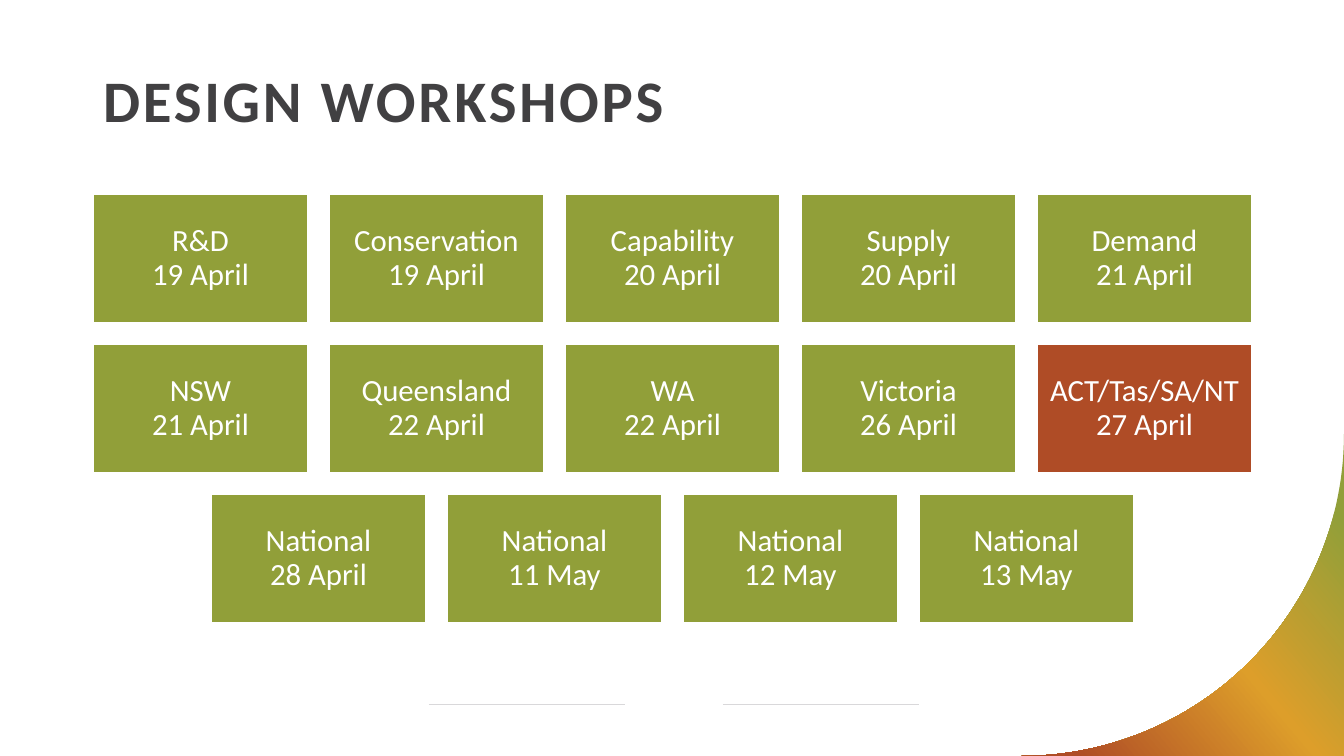
from copy import deepcopy
from dataclasses import dataclass
from math import cos, pi, sin

from lxml import etree
from pptx import Presentation
from pptx.dml.color import RGBColor
from pptx.enum.shapes import MSO_CONNECTOR, MSO_SHAPE
from pptx.enum.text import MSO_ANCHOR, MSO_AUTO_SIZE, PP_ALIGN
from pptx.oxml.ns import qn
from pptx.slide import Slide
from pptx.util import Emu, Pt

RECTANGLE = MSO_SHAPE.RECTANGLE
STRAIGHT = MSO_CONNECTOR.STRAIGHT
TOP, MIDDLE = MSO_ANCHOR.TOP, MSO_ANCHOR.MIDDLE
LEFT, CENTER = PP_ALIGN.LEFT, PP_ALIGN.CENTER
NO_AUTOFIT = MSO_AUTO_SIZE.NONE

GREEN = RGBColor(0x91, 0x9F, 0x39)
AMBER = RGBColor(0xDD, 0x9E, 0x2A)
RUST = RGBColor(0xAF, 0x4C, 0x26)
CHARCOAL = RGBColor(0x41, 0x40, 0x42)
PALE_GREY = RGBColor(0xD9, 0xD8, 0xDA)
WHITE = RGBColor(0xFF, 0xFF, 0xFF)

FONT = "Calibri"
SLIDE_WIDTH, SLIDE_HEIGHT = 1344, 756
CARD_WIDTH, CARD_HEIGHT, GAP = 215, 129, 21
CARDS_TOP, CARD_INSET = 194, 9
CORNER_RADIUS, ARC_STEPS = 322, 90
CORNER_STOPS = [(0.12, GREEN), (0.5, AMBER), (0.91, RUST)]
FOOTER_Y, FOOTER_LINE_WIDTH = 704, 196
FOOTER_LINE_LEFTS = [429, 723]


@dataclass
class Workshop:
    name: str
    date: str
    color: RGBColor = GREEN


WORKSHOP_ROWS = [
    [
        Workshop("R&D", "19 April"),
        Workshop("Conservation", "19 April"),
        Workshop("Capability", "20 April"),
        Workshop("Supply", "20 April"),
        Workshop("Demand", "21 April"),
    ],
    [
        Workshop("NSW", "21 April"),
        Workshop("Queensland", "22 April"),
        Workshop("WA", "22 April"),
        Workshop("Victoria", "26 April"),
        Workshop("ACT/Tas/SA/NT", "27 April", RUST),
    ],
    [
        Workshop("National", "28 April"),
        Workshop("National", "11 May"),
        Workshop("National", "12 May"),
        Workshop("National", "13 May"),
    ],
]


def px(length: float) -> Emu:
    return Emu(round(length * 12192000 / SLIDE_WIDTH))


def draw_footer_line(slide: Slide, left: int) -> None:
    line = slide.shapes.add_connector(
        STRAIGHT, px(left), px(FOOTER_Y), px(left + FOOTER_LINE_WIDTH), px(FOOTER_Y)
    )
    line.line.color.rgb = PALE_GREY
    line.line.width = Pt(0.5)
    etree.SubElement(line._element.spPr, qn("a:effectLst"))


def draw_corner(slide: Slide) -> None:
    center_x = SLIDE_WIDTH - CORNER_RADIUS
    center_y = SLIDE_HEIGHT - CORNER_RADIUS
    angles = [step * pi / 2 / ARC_STEPS for step in range(ARC_STEPS + 1)]
    arc = [
        (px(center_x + CORNER_RADIUS * cos(angle)), px(center_y + CORNER_RADIUS * sin(angle)))
        for angle in angles
    ]
    builder = slide.shapes.build_freeform(px(SLIDE_WIDTH), px(SLIDE_HEIGHT), 1.0)
    builder.add_line_segments(arc, close=True)
    corner = builder.convert_to_shape()
    corner.shadow.inherit = False
    corner.line.fill.background()
    corner.fill.gradient()
    stop_list = corner._element.spPr.find(qn("a:gradFill")).find(qn("a:gsLst"))
    stop_list.append(deepcopy(stop_list[0]))
    for stop, (position, color) in zip(corner.fill.gradient_stops, CORNER_STOPS):
        stop.position = position
        stop.color.rgb = color
    corner.fill.gradient_angle = 220


def write_title(slide: Slide, text: str) -> None:
    title = slide.shapes.title
    title.left, title.top, title.width, title.height = px(93), px(67), px(1159), px(103)
    frame = title.text_frame
    frame.auto_size = NO_AUTOFIT
    frame.vertical_anchor = TOP
    paragraph = frame.paragraphs[0]
    paragraph.alignment = LEFT
    paragraph.line_spacing = 0.9
    run = paragraph.add_run()
    run.text = text
    run.font.name = FONT
    run.font.size = Pt(42)
    run.font.bold = True
    run.font.color.rgb = CHARCOAL
    run._r.get_or_add_rPr().set("spc", "200")


def draw_workshop(slide: Slide, workshop: Workshop, left: int, top: int) -> None:
    card = slide.shapes.add_shape(
        RECTANGLE, px(left), px(top), px(CARD_WIDTH), px(CARD_HEIGHT)
    )
    card.shadow.inherit = False
    card.fill.solid()
    card.fill.fore_color.rgb = workshop.color
    card.line.color.rgb = WHITE
    card.line.width = Pt(1)
    frame = card.text_frame
    frame.word_wrap = True
    frame.vertical_anchor = MIDDLE
    frame.margin_left = frame.margin_right = px(CARD_INSET)
    frame.margin_top = frame.margin_bottom = px(CARD_INSET)
    paragraph = frame.paragraphs[0]
    paragraph.alignment = CENTER
    paragraph.line_spacing = 0.9
    for index, text in enumerate((workshop.name, workshop.date)):
        if index:
            paragraph.add_line_break()
        run = paragraph.add_run()
        run.text = text
        run.font.name = FONT
        run.font.size = Pt(22)
        run.font.color.rgb = WHITE


def main() -> None:
    presentation = Presentation()
    presentation.slide_width = px(SLIDE_WIDTH)
    presentation.slide_height = px(SLIDE_HEIGHT)
    slide = presentation.slides.add_slide(presentation.slide_layouts[5])

    for left in FOOTER_LINE_LEFTS:
        draw_footer_line(slide, left)
    draw_corner(slide)
    write_title(slide, "DESIGN WORKSHOPS")

    for row_index, row in enumerate(WORKSHOP_ROWS):
        row_width = len(row) * (CARD_WIDTH + GAP) - GAP
        row_left = SLIDE_WIDTH // 2 - row_width // 2
        top = CARDS_TOP + row_index * (CARD_HEIGHT + GAP)
        for column, workshop in enumerate(row):
            draw_workshop(slide, workshop, row_left + column * (CARD_WIDTH + GAP), top)

    presentation.save("out.pptx")


if __name__ == "__main__":
    main()
